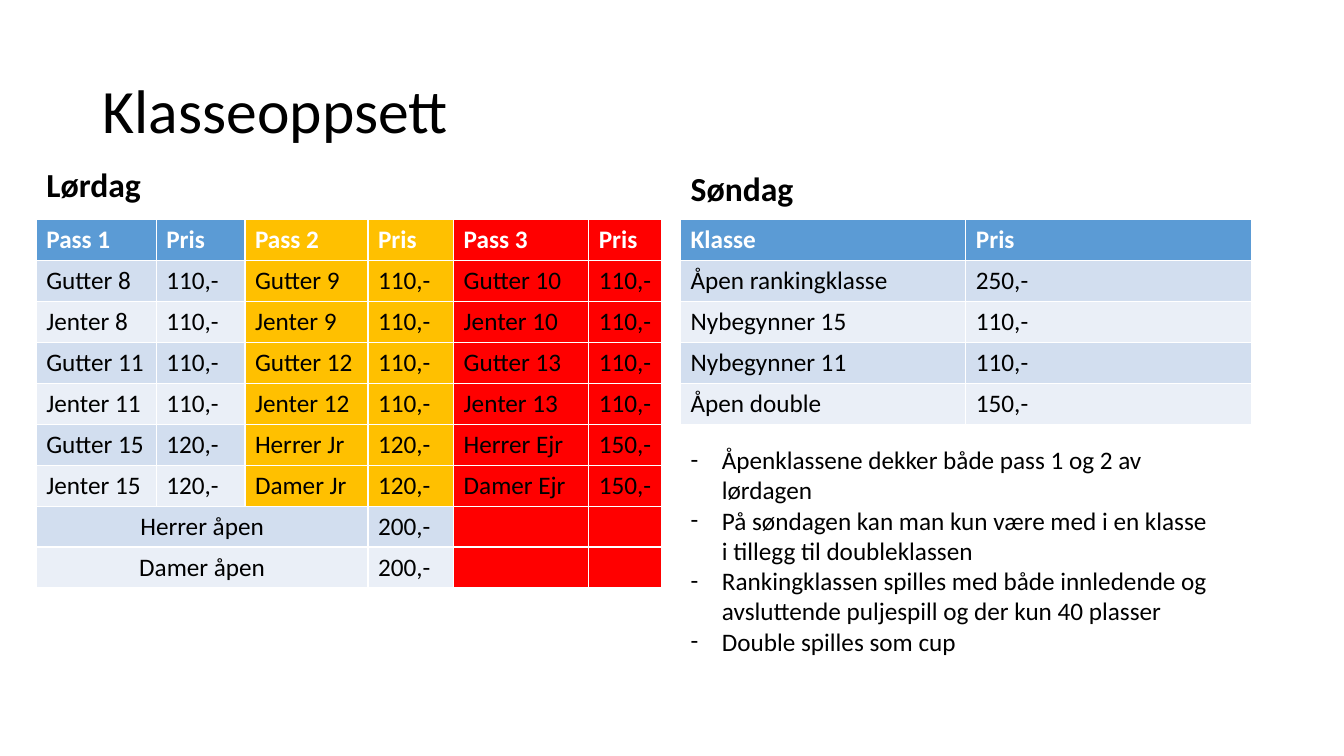
"""Build the class and price overview slide."""
from lxml import etree
from pptx import Presentation
from pptx.dml.color import RGBColor
from pptx.enum import text as t
from pptx.oxml import ns
from pptx.util import Inches, Pt

BLACK = RGBColor(0x00, 0x00, 0x00)
WHITE = RGBColor(0xFF, 0xFF, 0xFF)
BLUE = RGBColor(0x5B, 0x9B, 0xD5)
GOLD = RGBColor(0xFF, 0xC0, 0x00)
RED = RGBColor(0xFF, 0x00, 0x00)
BANDS = RGBColor(0xEA, 0xEF, 0xF7), RGBColor(0xD2, 0xDE, 0xEF)
ROW = 0.406

SATURDAY = [
    ["Pass 1", "Pris", "Pass 2", "Pris", "Pass 3", "Pris"],
    ["Gutter 8", "110,-", "Gutter 9", "110,-", "Gutter 10", "110,-"],
    ["Jenter 8", "110,-", "Jenter 9", "110,-", "Jenter 10", "110,-"],
    ["Gutter 11", "110,-", "Gutter 12", "110,-", "Gutter 13", "110,-"],
    ["Jenter 11", "110,-", "Jenter 12", "110,-", "Jenter 13", "110,-"],
    ["Gutter 15", "120,-", "Herrer Jr", "120,-", "Herrer Ejr", "150,-"],
    ["Jenter 15", "120,-", "Damer Jr", "120,-", "Damer Ejr", "150,-"],
    ["Herrer åpen", "", "", "200,-", "", ""],
    ["Damer åpen", "", "", "200,-", "", ""],
]
SUNDAY = [
    ["Klasse", "Pris"],
    ["Åpen rankingklasse", "250,-"],
    ["Nybegynner 15", "110,-"],
    ["Nybegynner 11", "110,-"],
    ["Åpen double", "150,-"],
]
RULES = [
    "Åpenklassene dekker både pass 1 og 2 av lørdagen",
    "På søndagen kan man kun være med i en klasse i tillegg til doubleklassen",
    "Rankingklassen spilles med både innledende og avsluttende puljespill og der kun 40 plasser",
    "Double spilles som cup",
]


def style(par, size, color=BLACK, bold=False):
    for run in par.runs:
        font = run.font
        font.name, font.size, font.bold = "Calibri", Pt(size), bold
        font.color.rgb = color


def place(holder, box, anchor):
    holder.left, holder.top, holder.width, holder.height = map(Inches, box)
    frame = holder.text_frame
    frame.word_wrap = True
    frame.auto_size = t.MSO_AUTO_SIZE.NONE
    frame.vertical_anchor = anchor
    return frame


def heading(holder, words, box, size, anchor, bold=False):
    frame = place(holder, box, anchor)
    frame.text = words
    par = frame.paragraphs[0]
    par.alignment = t.PP_ALIGN.LEFT
    par.line_spacing = 0.9
    par.space_before = Pt(0)
    style(par, size, bold=bold)


def bullets(holder, lines, box):
    frame = place(holder, box, t.MSO_ANCHOR.TOP)
    frame.text = "\n".join(lines)
    for par in frame.paragraphs:
        par.space_before = Pt(0)
        props = par._p.get_or_add_pPr()
        props.set("marL", str(Inches(0.31)))
        props.set("indent", str(Inches(-0.31)))
        etree.SubElement(props, ns.qn("a:buFont")).set("typeface", "Calibri")
        etree.SubElement(props, ns.qn("a:buChar")).set("char", "-")
        style(par, 18)


def grid(slide, rows, widths, left, tints):
    """Add a banded table; tinted columns keep their colour, short rows merge."""
    size = Inches(sum(widths)), Inches(ROW * len(rows))
    table = slide.shapes.add_table(
        len(rows), len(widths), Inches(left), Inches(2.18), *size).table
    for col, width in zip(table.columns, widths):
        col.width = Inches(width)
    for r, row in enumerate(rows):
        table.rows[r].height = Inches(ROW)
        wide = not row[1]
        for c, words in enumerate(row):
            cell = table.cell(r, c)
            cell.text = words
            par = cell.text_frame.paragraphs[0]
            style(par, 18, BLACK if r else WHITE, r == 0)
            base = BANDS[r % 2] if r else BLUE
            tint = None if wide and c < 4 else tints.get(c)
            cell.fill.solid()
            cell.fill.fore_color.rgb = tint or base
        if wide:
            first = table.cell(r, 0)
            first.merge(table.cell(r, 2))
            first.text_frame.paragraphs[0].alignment = t.PP_ALIGN.CENTER


def main():
    deck = Presentation()
    deck.slide_width, deck.slide_height = Inches(13.33), Inches(7.5)
    slide = deck.slides.add_slide(deck.slide_layouts[4])
    title, sat, spare, sun, notes = slide.placeholders
    spare.element.getparent().remove(spare.element)
    low = t.MSO_ANCHOR.BOTTOM
    heading(title, "Klasseoppsett", (0.92, 0.4, 11.5, 1.45), 44, t.MSO_ANCHOR.MIDDLE)
    heading(sat, "Lørdag", (0.36, 1.54, 5.64, 0.54), 24, low, True)
    heading(sun, "Søndag", (6.75, 1.5, 5.67, 0.62), 24, low, True)
    grid(slide, SATURDAY, [1.19, 0.88, 1.22, 0.85, 1.34, 0.72], 0.36,
         {2: GOLD, 3: GOLD, 4: RED, 5: RED})
    grid(slide, SUNDAY, [2.83, 2.83], 6.75, {})
    bullets(notes, RULES, (6.75, 4.36, 5.38, 2.22))
    deck.save("out.pptx")


if __name__ == "__main__":
    main()
